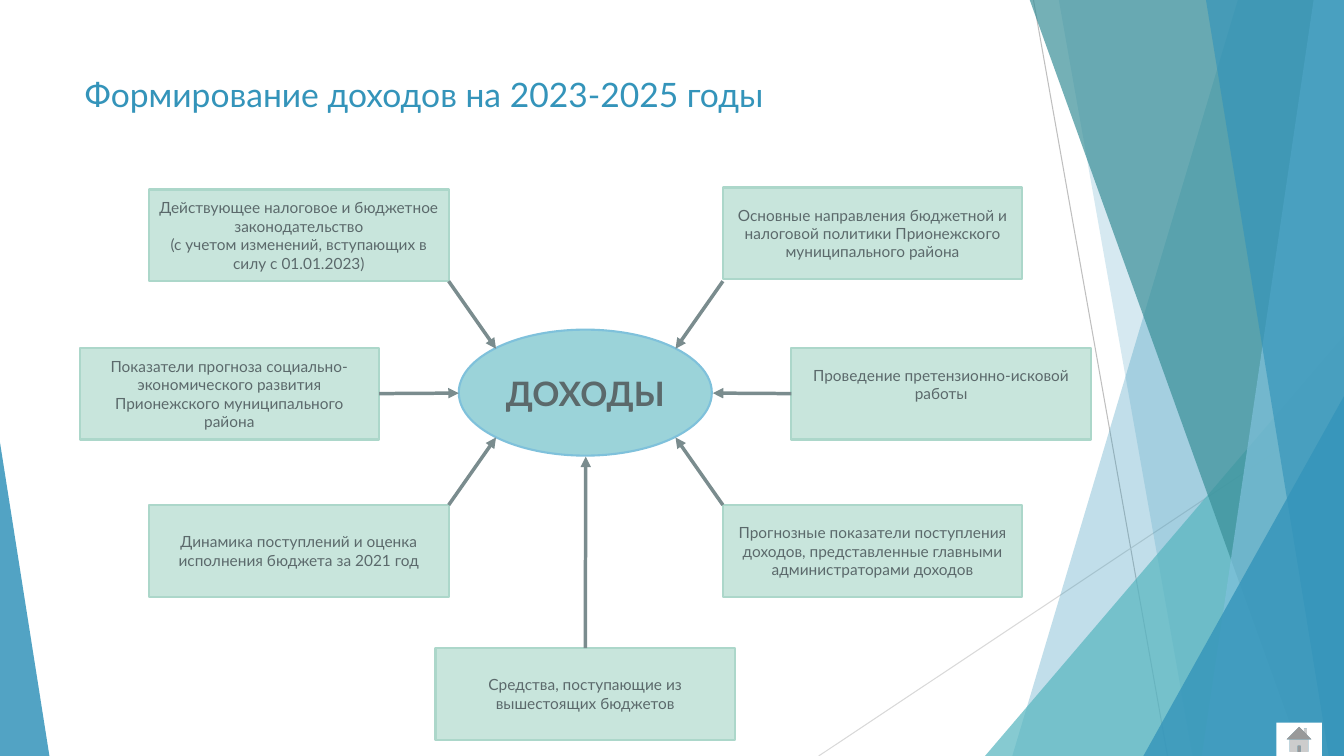
from dataclasses import dataclass
from lxml import etree
from pptx import Presentation
from pptx import util as u
from pptx.dml.color import RGBColor
from pptx.enum import shapes, text
from pptx.oxml.ns import qn

KIND = shapes.MSO_SHAPE


@dataclass
class Theme:
    font: str = "Lato"
    blue: str = "3494BA"
    sky: str = "7FC1DB"
    teal: str = "58B6C0"
    deep: str = "3A8F98"
    pool: str = "9BD3D9"
    mint: str = "C8E5DC"
    edge: str = "ACD7CA"
    ink: str = "5B696B"
    arrow: str = "7A8C8E"
    white: str = "FFFFFF"
    gray: str = "BFBFBF"
    pale: str = "D9D9D9"
    big: int = 24
    small: int = 11


class Deck:
    def __init__(self, theme):
        self.theme = theme
        self.prs = Presentation()
        self.prs.slide_width = u.Inches(13.33)
        self.prs.slide_height = u.Inches(7.5)
        self.slide = self.prs.slides.add_slide(self.prs.slide_layouts[5])
        self.items = self.slide.shapes

    def paint(self, shape, fill, alpha=100, line=None):
        shape.shadow.inherit = False
        shape.fill.solid()
        shape.fill.fore_color.rgb = RGBColor.from_string(fill)
        if alpha < 100:
            color = shape._element.spPr.find(qn("a:solidFill"))[0]
            etree.SubElement(color, qn("a:alpha"), val=str(alpha * 1000))
        if line:
            shape.line.color.rgb = RGBColor.from_string(line)
            shape.line.width = u.Pt(1.5)
        else:
            shape.line.fill.background()
        return shape

    def label(self, shape, words, size, color, bold=False,
              align=text.PP_ALIGN.CENTER):
        frame = shape.text_frame
        frame.text = words
        frame.word_wrap = True
        frame.vertical_anchor = text.MSO_ANCHOR.MIDDLE
        for para in frame.paragraphs:
            para.alignment = align
            font = para.font
            font.name, font.size, font.bold = self.theme.font, u.Pt(size), bold
            font.color.rgb = RGBColor.from_string(color)

    def title(self, words, *spot):
        head = self.items.title
        head.left, head.top, head.width, head.height = map(u.Inches, spot)
        self.label(head, words, self.theme.big, self.theme.blue,
                   align=text.PP_ALIGN.LEFT)

    def shape(self, kind, spot, fill, alpha=100, line=None, adjust=None):
        item = self.items.add_shape(kind, *map(u.Inches, spot))
        if adjust is not None:
            item.adjustments[0] = adjust
        return self.paint(item, fill, alpha, line)

    def facet(self, points, fill, alpha):
        dots = [(u.Inches(x), u.Inches(y)) for x, y in points]
        form = self.items.build_freeform(*dots[0], scale=1)
        form.add_line_segments(dots[1:], close=True)
        self.paint(form.convert_to_shape(), fill, alpha)

    def box(self, words, left, top):
        item = self.shape(KIND.FLOWCHART_PROCESS, (left, top, 2.97, 0.91),
                          self.theme.mint, line=self.theme.edge)
        self.label(item, words, self.theme.small, self.theme.ink)
        return item

    def line(self, start, end, color, width):
        item = self.items.add_connector(
            shapes.MSO_CONNECTOR.STRAIGHT, *map(u.Inches, start + end))
        item.line.color.rgb = RGBColor.from_string(color)
        item.line.width = u.Pt(width)
        etree.SubElement(item._element.spPr, qn("a:effectLst"))
        return item

    def arrow(self, start, end, box=None, side=None):
        item = self.line(start, end, self.theme.arrow, 2.5)
        stroke = item._element.spPr.find(qn("a:ln"))
        etree.SubElement(stroke, qn("a:tailEnd"), type="triangle")
        if box is not None:
            item.begin_connect(box, side)


def decor(deck):
    t = deck.theme
    deck.line((10.25, 0), (11.58, 7.5), t.gray, 0.75)
    deck.line((13.33, 4.03), (8.12, 7.5), t.pale, 0.75)

    def strip(top, base, fill, alpha):
        deck.facet([(top, -0.01), (13.33, -0.01), (13.33, 7.5), (base, 7.5)],
                   fill, alpha)

    def wedge(left, top, width, fill, alpha, tip):
        deck.shape(KIND.ISOSCELES_TRIANGLE, (left, top, width, 7.5 - top),
                   fill, alpha, adjust=tip)

    strip(12.28, 10.04, t.blue, 30)
    strip(10.5, 11.83, t.blue, 20)
    wedge(9.77, 3.33, 3.56, t.teal, 72, 1)
    strip(10.21, 12.91, t.deep, 70)
    strip(13.03, 11.92, t.sky, 70)
    strip(11.96, 13.18, t.blue, 65)
    wedge(11.34, 3.93, 1.99, t.blue, 80, 1)
    wedge(0, 4.39, 0.49, t.blue, 85, 0)


def main():
    t = Theme()
    deck = Deck(t)
    decor(deck)
    deck.title("Формирование доходов на 2023-2025 годы", 0.74, 0.67, 9.4, 0.53)
    deck.shape(KIND.ACTION_BUTTON_HOME, (12.66, 7.17, 0.45, 0.33), t.white)
    hub = deck.shape(KIND.OVAL, (4.55, 3.27, 2.51, 1.25), t.pool, line=t.sky)
    deck.label(hub, "ДОХОДЫ", t.big, t.ink, bold=True)

    deck.box("Основные направления бюджетной и налоговой политики "
             "Прионежского муниципального района", 7.17, 1.86)
    claims = deck.box("Проведение претензионно-исковой работы", 7.85, 3.45)
    claims.text_frame.margin_bottom = u.Inches(0.23)
    deck.box("Прогнозные показатели поступления доходов, представленные "
             "главными администраторами доходов", 7.17, 5.01)
    deck.box("Действующее налоговое и бюджетное законодательство\v"
             "(с учетом изменений, вступающих в силу с 01.01.2023)", 1.48, 1.88)
    outlook = deck.box("Показатели прогноза социально-экономического развития "
                       "Прионежского муниципального района", 0.79, 3.45)
    deck.box("Динамика поступлений и оценка исполнения бюджета за 2021 год",
             1.48, 5.01)
    grants = deck.box("Средства, поступающие из вышестоящих бюджетов", 4.32, 6.43)

    for near, far in ((4.45, 4.92), (7.17, 6.7)):
        deck.arrow((near, 2.79), (far, 3.46))
        deck.arrow((near, 5.01), (far, 4.34))
    deck.arrow((3.76, 3.9), (4.55, 3.9), outlook, 3)
    deck.arrow((7.85, 3.9), (7.07, 3.9), claims, 1)
    deck.arrow((5.81, 6.43), (5.81, 4.53), grants, 0)
    deck.prs.save("out.pptx")


if __name__ == "__main__":
    main()
